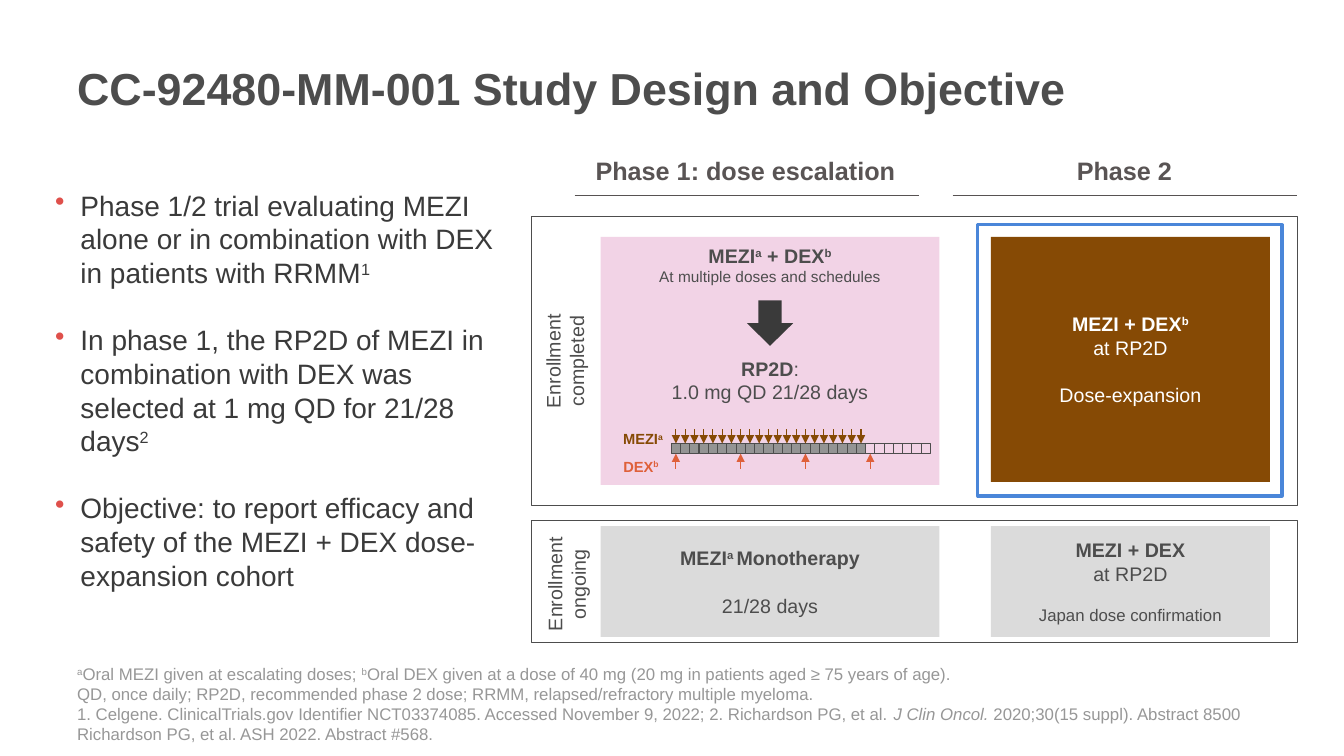
import dataclasses

import lxml.etree
import pptx
import pptx.dml.color
import pptx.enum.shapes
import pptx.enum.text
import pptx.oxml.ns
import pptx.util

Pt = pptx.util.Pt
qn = pptx.oxml.ns.qn
SHAPE = pptx.enum.shapes.MSO_SHAPE
ALIGN = pptx.enum.text.PP_ALIGN
ANCHOR = pptx.enum.text.MSO_ANCHOR

DARK, CHARCOAL, HEADING, RULE = "4D4D4D", "3A3A3A", "595454", "575252"
BROWN, ORANGE, RED, BLUE = "864A05", "DF603A", "DF504B", "4A86D9"
PINK, PALE, GREY, NOTE, WHITE = "F2D3E6", "DBDBDB", "949494", "979797", "FFFFFF"
TIGHT = (5, 3)

CYCLE_DAYS, MEZI_DAYS, WEEK = 28, 21, 7
DAY_WIDTH, DAY_HEIGHT = 6.61, 7.2
CYCLE_LEFT, CYCLE_TOP = 479.5, 316.8


@dataclasses.dataclass
class Line:
    """One paragraph: plain strings, or (text, style) with style super, italic or bold."""
    spans: list
    size: float = 14
    bold: bool = False
    before: float = 0
    bullet: bool = False


def rgb(value):
    return pptx.dml.color.RGBColor.from_string(value)


def add_bullet(para):
    properties = para._p.get_or_add_pPr()
    properties.set("marL", str(Pt(18)))
    properties.set("indent", str(-Pt(18)))
    bullet_color = lxml.etree.SubElement(properties, qn("a:buClr"))
    lxml.etree.SubElement(bullet_color, qn("a:srgbClr"), val=RED)
    lxml.etree.SubElement(properties, qn("a:buChar"), char="•")


def write_lines(shape, lines, color, align=ALIGN.CENTER, anchor=ANCHOR.TOP, insets=(7.2, 3.6)):
    frame = shape.text_frame
    frame.word_wrap = True
    frame.vertical_anchor = anchor
    frame.margin_left = frame.margin_right = Pt(insets[0])
    frame.margin_top = frame.margin_bottom = Pt(insets[1])
    for index, line in enumerate(lines):
        para = frame.add_paragraph() if index else frame.paragraphs[0]
        para.alignment = align
        para.space_before = Pt(line.before)
        if line.bullet:
            add_bullet(para)
        para.font.name = "Arial"
        para.font.size = Pt(line.size)
        para.font.bold = line.bold
        para.font.color.rgb = rgb(color)
        for part in line.spans:
            text, style = (part, None) if isinstance(part, str) else part
            span = para.add_run()
            span.text = text
            if style == "super":
                span._r.get_or_add_rPr().set("baseline", "30000")
            elif style == "italic":
                span.font.italic = True
            elif style == "bold":
                span.font.bold = True


def add_text(shapes, place, lines, color, rotation=0, **layout):
    box = shapes.add_textbox(*map(Pt, place))
    box.rotation = rotation
    write_lines(box, lines, color, **layout)


def add_block(shapes, place, fill=None, line=None, width=0.75, kind=SHAPE.RECTANGLE):
    block = shapes.add_shape(kind, *map(Pt, place))
    block.shadow.inherit = False
    if fill:
        block.fill.solid()
        block.fill.fore_color.rgb = rgb(fill)
    else:
        block.fill.background()
    if line:
        block.line.color.rgb = rgb(line)
        block.line.width = Pt(width)
    else:
        block.line.fill.background()
    return block


def add_rule(shapes, start, end, color, width):
    rule = shapes.add_connector(pptx.enum.shapes.MSO_CONNECTOR.STRAIGHT, *map(Pt, start + end))
    rule.line.color.rgb = rgb(color)
    rule.line.width = Pt(width)
    lxml.etree.SubElement(rule._element.spPr, qn("a:effectLst"))
    return rule


def add_dose_arrow(shapes, day, side, start_y, color):
    """Arrow from start_y to the top (0) or bottom (2) of a day cell."""
    x = (day.left + day.width / 2) / Pt(1)
    arrow = add_rule(shapes, (x, start_y), (x, CYCLE_TOP), color, 0.75)
    arrow.end_connect(day, side)
    lxml.etree.SubElement(arrow.line._get_or_add_ln(), qn("a:tailEnd"), type="triangle")


def add_dosing_cycle(slide):
    shapes = slide.shapes.add_group_shape().shapes
    add_text(shapes, (436.3, 323.3, 43.2, 20.9),
             [Line(["DEX", ("b", "super")], 10.5, True)], ORANGE)
    add_text(shapes, (436.3, 303.8, 46.1, 20.9),
             [Line(["MEZI", ("a", "super")], 10.5, True)], BROWN)
    days = [add_block(shapes, (CYCLE_LEFT + day * DAY_WIDTH, CYCLE_TOP, DAY_WIDTH, DAY_HEIGHT),
                      GREY if day < MEZI_DAYS else None, DARK)
            for day in range(CYCLE_DAYS)]
    for day in days[::WEEK]:
        add_dose_arrow(shapes, day, 2, 334.8, ORANGE)
    for day in days[:MEZI_DAYS]:
        add_dose_arrow(shapes, day, 0, 306.7, BROWN)


def add_left_column(shapes):
    add_text(shapes, (48, 15.8, 846, 93.6),
             [Line(["CC-92480-MM-001 Study Design and Objective"], 32, True)],
             DARK, align=ALIGN.LEFT, anchor=ANCHOR.MIDDLE)
    points = [
        ["Phase 1/2 trial evaluating MEZI alone or in combination with DEX in patients with RRMM",
         ("1", "super")],
        ["In phase 1, the RP2D of MEZI in combination with DEX was selected at 1 mg QD for 21/28 days",
         ("2", "super")],
        ["Objective: to report efficacy and safety of the MEZI + DEX dose-expansion cohort"],
    ]
    add_text(shapes, (32.4, 131, 328.3, 311.8),
             [Line(spans, 20, before=24 if index else 0, bullet=True)
              for index, spans in enumerate(points)],
             CHARCOAL, align=ALIGN.LEFT)


def add_phase_headings(shapes):
    for title, left, width, rule_left in (("Phase 1: dose escalation", 413.3, 238.3, 410.4),
                                          ("Phase 2", 760.3, 85.7, 680.4)):
        add_text(shapes, (left, 107.3, width, 30.2), [Line([title], 18, True)], HEADING)
        add_rule(shapes, (rule_left, 139.7), (rule_left + 246.3, 139.7), RULE, 1)


def add_enrollment_rows(shapes):
    for status, top, height, label_place in (
            ("completed", 154.8, 206.6, (300.2, 237.6, 206.6, 41)),
            ("ongoing", 371.5, 87.8, (354.2, 396.7, 100.8, 41))):
        add_block(shapes, (379.4, top, 547.2, height), line=DARK)
        add_text(shapes, label_place, [Line(["Enrollment"]), Line([status])], DARK, rotation=270)


def add_cohorts(shapes):
    add_block(shapes, (429.1, 169.2, 241.9, 177.1), PINK)
    add_text(shapes, (443.5, 170.6, 213.1, 37.4),
             [Line(["MEZI", ("a", "super"), " + DEX", ("b", "super")], bold=True),
              Line(["At multiple doses and schedules"], 11)],
             DARK, anchor=ANCHOR.MIDDLE, insets=TIGHT)
    add_block(shapes, (533.5, 214.6, 33.1, 32.4), CHARCOAL, kind=SHAPE.DOWN_ARROW)
    add_text(shapes, (429.1, 251.3, 241.9, 41),
             [Line([("RP2D", "bold"), ":"]), Line(["1.0 mg QD 21/28 days"])], DARK)

    monotherapy = add_block(shapes, (429.1, 375.8, 241.9, 79.2), PALE)
    write_lines(monotherapy,
                [Line(["MEZI", ("a ", "super"), "Monotherapy"], bold=True),
                 Line(["21/28 days"], before=17)],
                DARK, anchor=ANCHOR.MIDDLE, insets=TIGHT)

    add_block(shapes, (698.4, 160.6, 217.4, 193.7), line=BLUE, width=2.25)
    expansion = add_block(shapes, (707.8, 169.2, 199.4, 175), BROWN)
    write_lines(expansion,
                [Line(["MEZI + DEX", ("b", "super")], bold=True),
                 Line(["at RP2D"]), Line(["Dose-expansion"], before=17)],
                WHITE, anchor=ANCHOR.MIDDLE)

    confirmation = add_block(shapes, (707.8, 375.8, 199.4, 79.2), PALE)
    write_lines(confirmation,
                [Line(["MEZI + DEX"], bold=True), Line(["at RP2D"]),
                 Line(["Japan dose confirmation"], 12, before=14)],
                DARK, anchor=ANCHOR.MIDDLE, insets=TIGHT)


def add_footnotes(shapes):
    notes = [
        [("a", "super"), "Oral MEZI given at escalating doses; ", ("b", "super"),
         "Oral DEX given at a dose of 40 mg (20 mg in patients aged ≥ 75 years of age)."],
        ["QD, once daily; RP2D, recommended phase 2 dose; RRMM, relapsed/refractory multiple myeloma."],
        ["1. Celgene. ClinicalTrials.gov Identifier NCT03374085. Accessed November 9, 2022; "
         "2. Richardson PG, et al. ", ("J Clin Oncol. ", "italic"),
         "2020;30(15 suppl). Abstract 8500"],
        ["Richardson PG, et al. ASH 2022. Abstract #568."],
    ]
    add_text(shapes, (48, 482.4, 846, 52.6), [Line(spans, 12) for spans in notes],
             NOTE, align=ALIGN.LEFT, anchor=ANCHOR.BOTTOM)


def main():
    deck = pptx.Presentation()
    deck.slide_width, deck.slide_height = Pt(960), Pt(540)
    slide = deck.slides.add_slide(deck.slide_layouts[6])
    add_left_column(slide.shapes)
    add_phase_headings(slide.shapes)
    add_enrollment_rows(slide.shapes)
    add_cohorts(slide.shapes)
    add_dosing_cycle(slide)
    add_footnotes(slide.shapes)
    deck.save("out.pptx")


if __name__ == "__main__":
    main()
